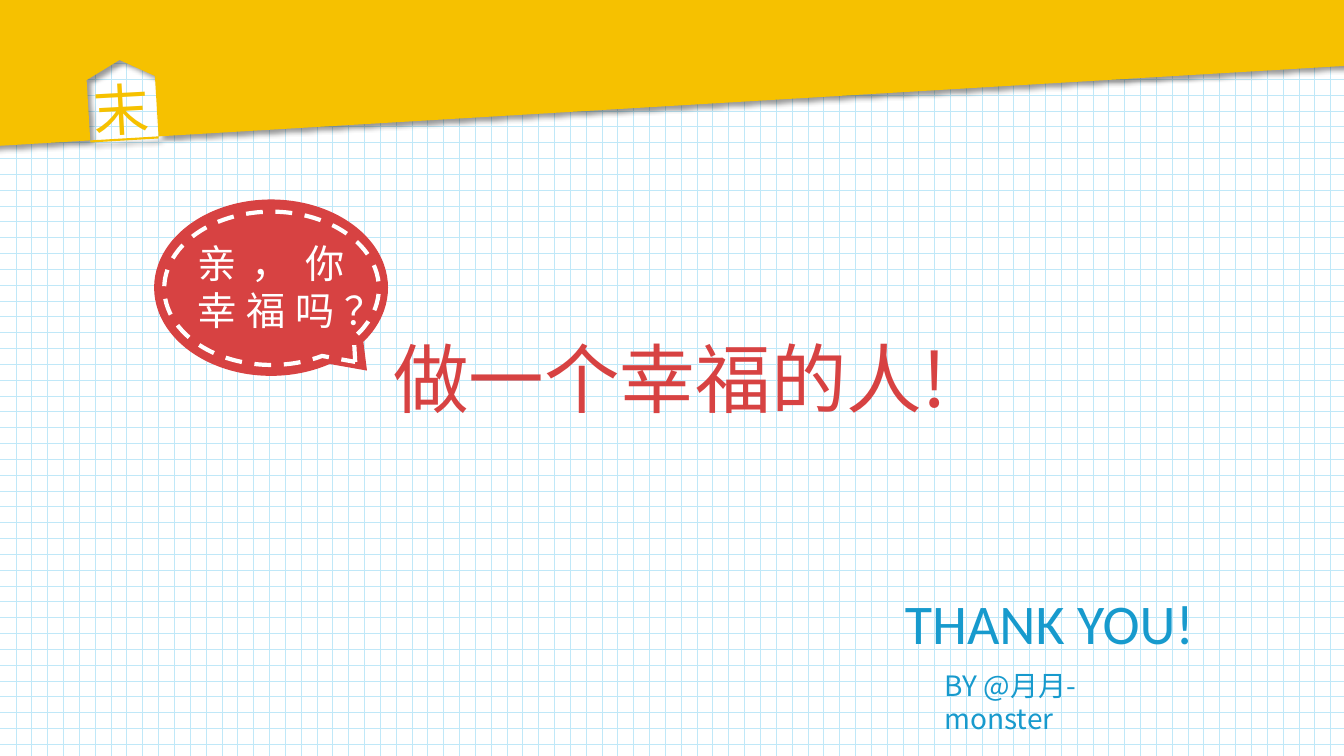
"""Closing slide: a torn yellow band, a speech bubble, a wish and a thank-you."""
from dataclasses import dataclass
from typing import Any

from lxml import etree
from pptx import Presentation
from pptx import util as u
from pptx.dml.color import RGBColor
from pptx.enum import dml, shapes, text
from pptx.oxml import ns

YELLOW = RGBColor(0xF6, 0xC1, 0x00)
RED = RGBColor(0xD7, 0x42, 0x42)
BLUE = RGBColor(0x17, 0x9A, 0xCD)
GRID_BLUE = RGBColor(0xC0, 0xE8, 0xF8)
WHITE = RGBColor(0xFF, 0xFF, 0xFF)
BLACK = RGBColor(0, 0, 0)

WIDTH, HEIGHT = u.Inches(13.33), u.Inches(7.5)
COLS, ROWS = 32, 18
SC, JP, LATIN = "Noto Sans CJK SC", "Noto Sans CJK JP", "Calibri"

BAND_COL, BAND_ROW = -0.67, -1.03
BAND = [(0, 0), (33.29, 0), (33.29, 3.55), (4.32, 3.55), (4.32, 2.11),
        (3.5, 1.68), (2.69, 2.11), (2.69, 3.55), (0, 3.55)]
DOORSTEP = [(2.69, 3.55), (4.32, 3.55), (4.32, 3.6), (2.69, 3.6)]


@dataclass(frozen=True)
class Box:
    """A frame in columns and rows of the grid."""
    col: float
    row: float
    cols: float
    rows: float

    def emu(self) -> tuple[int, int, int, int]:
        """Return left, top, width and height in EMU."""
        return (*at(self.col, self.row), *at(self.cols, self.rows))


@dataclass(frozen=True)
class Label:
    """One line of text with its frame and look."""
    words: str
    box: Box
    size: int
    font: str
    color: RGBColor
    wrap: bool = False
    align: Any = text.PP_ALIGN.LEFT
    rotation: float = 0
    right_inset: float = 0.1


@dataclass(frozen=True)
class Bubble:
    """A mirrored oval callout, either filled or stitched."""
    box: Box
    tail: tuple[float, float]
    stitched: bool


SEAL = Label("末", Box(1.99, 1.66, 1.82, 1.85), 40, LATIN, YELLOW, rotation=356.9)
WISH = Label("做一个幸福的人!", Box(9.12, 7.78, 17.14, 2.42), 54, SC, RED, wrap=True)
QUESTION = Label("亲，你幸福吗？", Box(4.46, 5.59, 3.98, 2.5), 28, JP, WHITE,
                 wrap=True, align=text.PP_ALIGN.JUSTIFY)
THANKS = [
    Label("THANK YOU!", Box(21.31, 13.9, 7.44, 1.85), 40, LATIN, BLUE),
    Label("BY @月月-monster", Box(22.25, 15.79, 6.5, 1.06), 20, SC, BLUE,
          wrap=True, right_inset=0.5),
]
BUBBLES = [
    Bubble(Box(3.67, 4.75, 5.57, 4.2), (-0.41, 0.47), False),
    Bubble(Box(3.91, 5.04, 5.11, 3.65), (-0.39, 0.48), True),
]


def at(col: float, row: float) -> tuple[int, int]:
    """Turn grid units into EMU."""
    return round(col * WIDTH / COLS), round(row * HEIGHT / ROWS)


def write(sp: Any, label: Label) -> None:
    """Place a text shape and fill it with one formatted run."""
    sp.left, sp.top, sp.width, sp.height = label.box.emu()
    sp.rotation = label.rotation
    tf = sp.text_frame
    tf.word_wrap = label.wrap
    tf.auto_size = text.MSO_AUTO_SIZE.SHAPE_TO_FIT_TEXT
    tf.vertical_anchor = text.MSO_ANCHOR.TOP
    tf.margin_right = u.Inches(label.right_inset)
    p = tf.paragraphs[0]
    p.alignment = label.align
    r = p.add_run()
    r.text = label.words
    r.font.size = u.Pt(label.size)
    r.font.name = label.font
    r.font.color.rgb = label.color
    ea = etree.SubElement(r.font._element, ns.qn("a:ea"))
    ea.set("typeface", SC if label.font == LATIN else label.font)


def add_label(parent: Any, label: Label) -> None:
    """Add a text box."""
    write(parent.add_textbox(*label.box.emu()), label)


def add_shadow(sp: Any) -> None:
    """Give a shape a soft shadow to the lower right."""
    sp.shadow.inherit = False
    effects = sp._element.spPr.find(ns.qn("a:effectLst"))
    shadow = etree.SubElement(effects, ns.qn("a:outerShdw"), blurRad=str(u.Pt(4)),
                              dist=str(u.Pt(3)), dir="2700000", algn="tl", rotWithShape="0")
    color = etree.SubElement(shadow, ns.qn("a:srgbClr"), val=str(BLACK))
    etree.SubElement(color, ns.qn("a:alpha"), val="40000")


def add_band(parent: Any) -> None:
    """Add the tilted band with its house-shaped window."""
    outlines = [[at(BAND_COL + x, BAND_ROW + y) for x, y in outline]
                for outline in (BAND, DOORSTEP)]
    builder = parent.build_freeform(*outlines[0][0], scale=1.0)
    builder.add_line_segments(outlines[0][1:], close=True)
    builder.move_to(*outlines[1][0])
    builder.add_line_segments(outlines[1][1:], close=True)
    sp = builder.convert_to_shape()
    sp.rotation = 356.6
    sp.fill.solid()
    sp.fill.fore_color.rgb = YELLOW
    sp.line.fill.background()
    add_shadow(sp)


def add_bubble(parent: Any, bubble: Bubble) -> None:
    """Add one layer of the speech bubble."""
    sp = parent.add_shape(shapes.MSO_SHAPE.OVAL_CALLOUT, *bubble.box.emu())
    sp._element.spPr.xfrm.set("flipH", "1")
    sp.adjustments[0], sp.adjustments[1] = bubble.tail
    sp.shadow.inherit = False
    if bubble.stitched:
        sp.fill.background()
        sp.line.color.rgb = WHITE
        sp.line.width = u.Pt(3)
        sp.line.dash_style = dml.MSO_LINE.DASH
    else:
        sp.fill.solid()
        sp.fill.fore_color.rgb = RED
        sp.line.fill.background()


def main() -> None:
    """Build and save the slide."""
    prs = Presentation()
    prs.slide_width, prs.slide_height = WIDTH, HEIGHT
    s = prs.slides.add_slide(prs.slide_layouts[5])
    paper = s.background.fill
    paper.patterned()
    paper.pattern = dml.MSO_PATTERN.DOTTED_GRID
    paper.fore_color.rgb = GRID_BLUE
    paper.back_color.rgb = WHITE

    header = s.shapes.add_group_shape().shapes
    add_band(header)
    add_label(header, SEAL)
    write(s.shapes.title, WISH)
    speech = s.shapes.add_group_shape().shapes
    for bubble in BUBBLES:
        add_bubble(speech, bubble)
    add_label(speech, QUESTION)
    closing = s.shapes.add_group_shape().shapes
    for label in THANKS:
        add_label(closing, label)
    prs.save("out.pptx")


if __name__ == "__main__":
    main()
